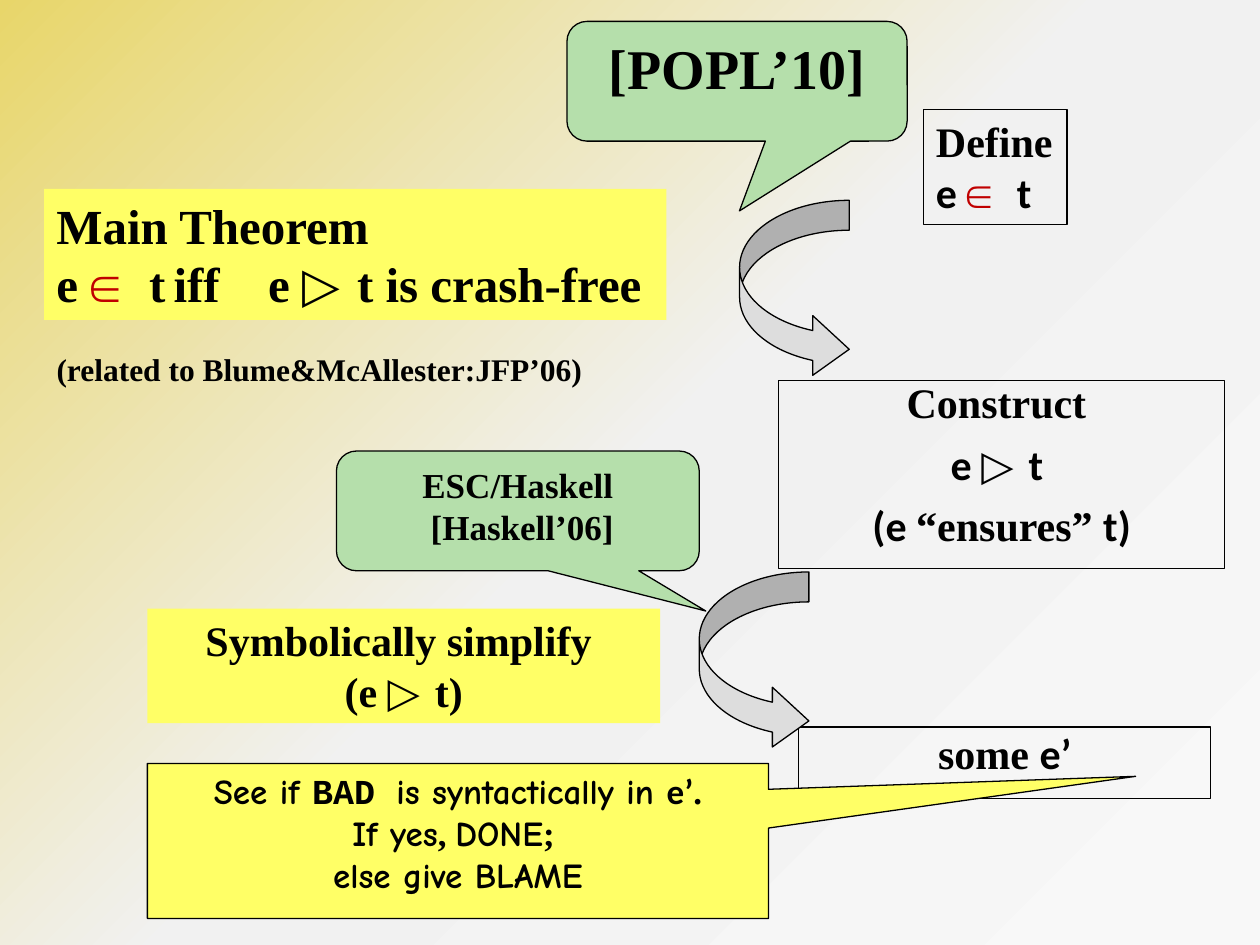
"""Build the slide on contracts: define, construct, simplify and check."""
import copy

import pptx
import pptx.dml.color
import pptx.enum.shapes
import pptx.enum.text
import pptx.oxml
import pptx.oxml.ns
import pptx.util

RGB = pptx.dml.color.RGBColor
SHAPE = pptx.enum.shapes.MSO_SHAPE
AUTO = pptx.enum.text.MSO_AUTO_SIZE
BLACK = RGB(0x00, 0x00, 0x00)
RED = RGB(0xC0, 0x00, 0x00)
YELLOW = RGB(0xFF, 0xFF, 0x66)
GREEN = RGB(0xB5, 0xDF, 0xAB)
GREY = RGB(0xDD, 0xDD, 0xDD)
BACKGROUND = [(0, RGB(0xE8, 0xD6, 0x6A)), (0.5, RGB(0xF1, 0xF1, 0xF1)),
              (1, RGB(0xF8, 0xF8, 0xF8))]

SERIF, SANS, COMIC, MONO = "Times New Roman", "Calibri", "Comic Neue", "Courier New"
MEMBER = ("∈ ", MONO, RED)
ENSURES = ("▷ ", COMIC)
ARROW = dict(shape=SHAPE.CURVED_RIGHT_ARROW, adj=[0.273, 0.545, 0.333],
             fill=GREY, line=True)
BUBBLE = dict(shape=SHAPE.ROUNDED_RECTANGULAR_CALLOUT, fill=GREEN, line=True,
              center=True)

ITEMS = [
    dict(at=(73.3, 11.6, 11.4, 12.13), line=True, grow=True, wrap=False, size=24,
         text=[[("Define", SERIF)], [("e ", SANS), MEMBER, ("t", SANS)]]),
    dict(at=(61.8, 40.27, 35.4, 19.87), line=True, grow=True, center=True, size=24,
         spacing=0.8,
         text=[[("Construct ", SERIF)],
               [("e ", SANS), ENSURES, ("t ", SANS)],
               [("(e ", SANS), ("“ensures” ", SERIF), ("t)", SANS)]]),
    dict(at=(58.7, 21.2, 8.7, 18.93), **ARROW),
    dict(at=(3.5, 20, 49.4, 13.87), fill=YELLOW, grow=True, wrap=False, size=28,
         tabs=(0.93, 1.68),
         text=[[("Main Theorem", SERIF)],
               [("e ", SERIF), MEMBER, ("t\tiff\te ", SERIF), ENSURES,
                ("t is crash-free", SERIF)]]),
    dict(at=(3.5, 36.4, 51.2, 6.93), shape=None, grow=True, size=18,
         text=[[("(related to Blume&McAllester:JFP’06)", SERIF)]]),
    dict(at=(63.4, 76.93, 32.7, 7.6), line=True, grow=True, center=True, size=24,
         spacing=0.9, text=[[("some ", SERIF), ("e’", SANS)]]),
    dict(at=(55.5, 60.53, 8.7, 18.93), **ARROW),
    dict(at=(11.7, 64.4, 40.7, 12.13), fill=YELLOW, grow=True, center=True, size=24,
         text=[[("Symbolically simplify ", SERIF)],
               [("(e ", SERIF), ENSURES, ("t)", SERIF)]]),
    dict(at=(11.7, 80.8, 49.3, 16.4), shape=SHAPE.RECTANGULAR_CALLOUT,
         adj=[1.091, -0.417], fill=YELLOW, line=True, center=True, size=20,
         text=[[("See if ", COMIC), ("BAD ", MONO), ("is syntactically in ", COMIC),
                ("e’", SANS), (".", SERIF)],
               [("If yes", COMIC), (", ", SERIF), ("DONE", COMIC), ("; ", SERIF)],
               [("else give BLAME", COMIC)]]),
    dict(at=(45, 2.27, 27, 12.67), adj=[0.007, 1.083, 0.167], size=32,
         text=[[("[POPL’10]", SERIF)]], **BUBBLE),
    dict(at=(26.7, 47.73, 28.8, 12.67), adj=[0.518, 0.836, 0.167], size=20,
         text=[[("ESC/Haskell", SERIF)], [(" [Haskell’06]", SERIF)]], **BUBBLE),
]


def paint_background(s):
    fill = s.background.fill
    fill.gradient()
    fill.gradient_angle = 315
    first = next(s.element.iter(pptx.oxml.ns.qn("a:gs")))
    first.addnext(copy.deepcopy(first))
    for stop, (position, color) in zip(fill.gradient_stops, BACKGROUND):
        stop.position = position
        stop.color.rgb = color


def add_child(parent, xml):
    ns = pptx.oxml.ns.nsdecls("a")
    parent.append(pptx.oxml.parse_xml(xml.replace("NS", ns, 1)))


def write_text(tf, item):
    tf.word_wrap = item.get("wrap", True)
    tf.auto_size = AUTO.SHAPE_TO_FIT_TEXT if item.get("grow") else AUTO.NONE
    tf.vertical_anchor = pptx.enum.text.MSO_ANCHOR.TOP
    align = pptx.enum.text.PP_ALIGN
    for i, runs in enumerate(item["text"]):
        p = tf.add_paragraph() if i else tf.paragraphs[0]
        p.alignment = align.CENTER if item.get("center") else align.LEFT
        ppr = p._p.get_or_add_pPr()
        if "spacing" in item:
            p.line_spacing = item["spacing"]
            add_child(ppr, '<a:spcBef NS><a:spcPct val="50000"/></a:spcBef>')
        if "tabs" in item:
            stops = "".join(f'<a:tab pos="{pptx.util.Inches(x)}" algn="l"/>'
                            for x in item["tabs"])
            add_child(ppr, f"<a:tabLst NS>{stops}</a:tabLst>")
        for text, font, *color in runs:
            r = p.add_run()
            r.text = text
            r.font.name = font
            r.font.size = pptx.util.Pt(item["size"])
            r.font.bold = True
            r.font.color.rgb = color[0] if color else BLACK


def add_item(prs, s, item):
    width, height = prs.slide_width, prs.slide_height
    box = [int(share * full / 100)
           for share, full in zip(item["at"], (width, height) * 2)]
    kind = item.get("shape", SHAPE.RECTANGLE)
    if kind is None:
        sp = s.shapes.add_textbox(*box)
    else:
        sp = s.shapes.add_shape(kind, *box)
        sp.shadow.inherit = False
        for i, value in enumerate(item.get("adj", [])):
            sp.adjustments[i] = value
        if "fill" in item:
            sp.fill.solid()
            sp.fill.fore_color.rgb = item["fill"]
        else:
            sp.fill.background()
        if item.get("line"):
            sp.line.color.rgb = BLACK
            sp.line.width = pptx.util.Pt(0.75)
        else:
            sp.line.fill.background()
    if "text" in item:
        write_text(sp.text_frame, item)


def main():
    prs = pptx.Presentation()
    prs.slide_width = pptx.util.Inches(10)
    prs.slide_height = pptx.util.Inches(7.5)
    s = prs.slides.add_slide(prs.slide_layouts[6])
    paint_background(s)
    for item in ITEMS:
        add_item(prs, s, item)
    prs.save("out.pptx")


if __name__ == "__main__":
    main()
